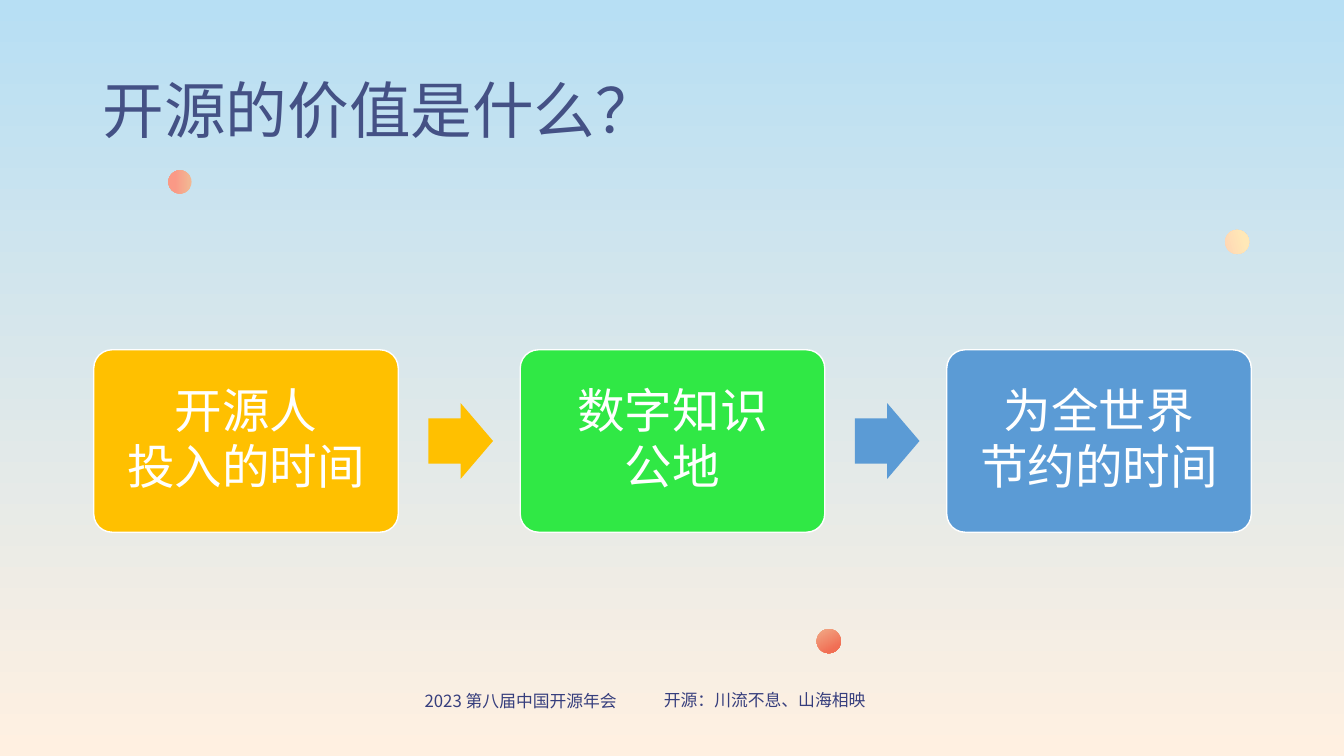
"""Build the slide on the value of open source."""
from dataclasses import dataclass

from lxml import etree
from pptx import Presentation
from pptx.dml.color import RGBColor
from pptx.dml.fill import FillFormat
from pptx.enum.shapes import MSO_SHAPE
from pptx.enum.text import MSO_ANCHOR, MSO_AUTO_SIZE, PP_ALIGN
from pptx.oxml.ns import qn
from pptx.slide import Slide
from pptx.text.text import TextFrame
from pptx.util import Inches, Pt

OVAL = MSO_SHAPE.OVAL
ROUND = MSO_SHAPE.ROUNDED_RECTANGLE
ARROW = MSO_SHAPE.RIGHT_ARROW
MIDDLE = MSO_ANCHOR.MIDDLE
GROW = MSO_AUTO_SIZE.SHAPE_TO_FIT_TEXT
LEFT = PP_ALIGN.LEFT
CENTER = PP_ALIGN.CENTER

FONT = "Noto Sans CJK SC"
WHITE = RGBColor(0xFF, 0xFF, 0xFF)
NAVY = RGBColor(0x36, 0x3E, 0x7D)
INDIGO = RGBColor(0x44, 0x51, 0x85)
SKY = RGBColor(0xB7, 0xDF, 0xF4)
CREAM = RGBColor(0xFF, 0xF0, 0xE1)
SAND = RGBColor(0xF1, 0xB9, 0x94)
PINK = RGBColor(0xFA, 0x99, 0x86)
CORAL = RGBColor(0xF1, 0x6E, 0x54)
PEACH = RGBColor(0xFF, 0xD3, 0xB4)
LEMON = RGBColor(0xFF, 0xE8, 0xB7)
GOLD = RGBColor(0xFF, 0xC0, 0x00)
GREEN = RGBColor(0x30, 0xE8, 0x45)
BLUE = RGBColor(0x5B, 0x9B, 0xD5)

START, PITCH = 0.93, 4.23
BOX_W, BOX_H, BOX_TOP = 3.02, 1.81, 3.47
TIP_W, TIP_H, TIP_GAP = 0.64, 0.75, 0.3


@dataclass
class Dot:
    left: float
    top: float
    size: float
    turn: float
    start: RGBColor
    end: RGBColor


@dataclass
class Step:
    text: str
    fill: RGBColor


@dataclass
class Label:
    text: str
    left: float
    top: float
    width: float


DOTS = [
    Dot(1.67, 1.69, 0.23, 90, SAND, PINK),
    Dot(8.1, 6.24, 0.24, 331, SAND, CORAL),
    Dot(12.15, 2.28, 0.24, 255, PEACH, LEMON),
]
STEPS = [
    Step("开源人\n投入的时间", GOLD),
    Step("数字知识\n公地", GREEN),
    Step("为全世界\n节约的时间", BLUE),
]
TIPS = [GOLD, BLUE]
LABELS = [
    Label("2023 第八届中国开源年会", 3.79, 6.8, 2.75),
    Label("开源：川流不息、山海相映", 6.38, 6.79, 2.41),
]


def blend(fill: FillFormat, start: RGBColor, end: RGBColor, stop: float) -> None:
    """Fill from top to bottom with two colours."""
    fill.gradient()
    fill.gradient_angle = 270
    first, last = fill.gradient_stops
    first.color.rgb, first.position = start, 0
    last.color.rgb, last.position = end, stop


def write(frame: TextFrame, text: str, size: float, color: RGBColor,
          align: PP_ALIGN, line: float = 1, after: float = 0) -> None:
    """Set the text of a frame and format its runs."""
    frame.word_wrap = True
    frame.text = text
    for para in frame.paragraphs:
        para.alignment = align
        para.line_spacing = line
        para.space_after = Pt(after)
        for run in para.runs:
            run.font.size = Pt(size)
            run.font.color.rgb = color
            run.font.name = FONT
            east = etree.SubElement(run.font._element, qn("a:ea"))
            east.set("typeface", FONT)


def add_dot(slide: Slide, dot: Dot) -> None:
    """Draw a shaded dot."""
    shape = slide.shapes.add_shape(OVAL, Inches(dot.left), Inches(dot.top),
                                   Inches(dot.size), Inches(dot.size))
    shape.shadow.inherit = False
    shape.rotation = dot.turn
    blend(shape.fill, dot.start, dot.end, 0.71)
    shape.line.fill.background()


def add_label(slide: Slide, label: Label) -> None:
    """Write a footer label."""
    box = slide.shapes.add_textbox(Inches(label.left), Inches(label.top),
                                   Inches(label.width), Inches(0.3))
    write(box.text_frame, label.text, 12, NAVY, CENTER)
    box.text_frame.auto_size = GROW


def add_title(slide: Slide, text: str) -> None:
    """Write the slide title."""
    box = slide.shapes.add_textbox(Inches(0.92), Inches(0.4),
                                   Inches(11.5), Inches(1.45))
    write(box.text_frame, text, 44, INDIGO, LEFT, 0.9)
    box.text_frame.vertical_anchor = MIDDLE


def add_step(slide: Slide, step: Step, left: float) -> None:
    """Draw a step of the flow with its text."""
    shape = slide.shapes.add_shape(ROUND, Inches(left), Inches(BOX_TOP),
                                   Inches(BOX_W), Inches(BOX_H))
    shape.shadow.inherit = False
    shape.adjustments[0] = 0.1
    shape.fill.solid()
    shape.fill.fore_color.rgb = step.fill
    shape.line.color.rgb = WHITE
    shape.line.width = Pt(1)
    frame = shape.text_frame
    frame.margin_left = frame.margin_right = Inches(0.14)
    frame.margin_top = frame.margin_bottom = Inches(0.14)
    frame.vertical_anchor = MIDDLE
    write(frame, step.text, 34, WHITE, CENTER, 0.9, 3.5)


def add_tip(slide: Slide, fill: RGBColor, left: float) -> None:
    """Draw a block arrow between two steps."""
    top = BOX_TOP + (BOX_H - TIP_H) / 2
    shape = slide.shapes.add_shape(ARROW, Inches(left), Inches(top),
                                   Inches(TIP_W), Inches(TIP_H))
    shape.shadow.inherit = False
    shape.adjustments[0] = 0.6
    shape.adjustments[1] = 0.5
    shape.fill.solid()
    shape.fill.fore_color.rgb = fill
    shape.line.fill.background()


def main() -> None:
    """Build and save the deck."""
    deck = Presentation()
    deck.slide_width, deck.slide_height = Inches(13.33), Inches(7.5)
    slide = deck.slides.add_slide(deck.slide_layouts[6])
    blend(slide.background.fill, SKY, CREAM, 1)
    for label in LABELS:
        add_label(slide, label)
    for dot in DOTS:
        add_dot(slide, dot)
    add_title(slide, "开源的价值是什么？")
    for i, step in enumerate(STEPS):
        add_step(slide, step, START + i * PITCH)
    for i, fill in enumerate(TIPS):
        add_tip(slide, fill, START + i * PITCH + BOX_W + TIP_GAP)
    deck.save("out.pptx")


if __name__ == "__main__":
    main()
